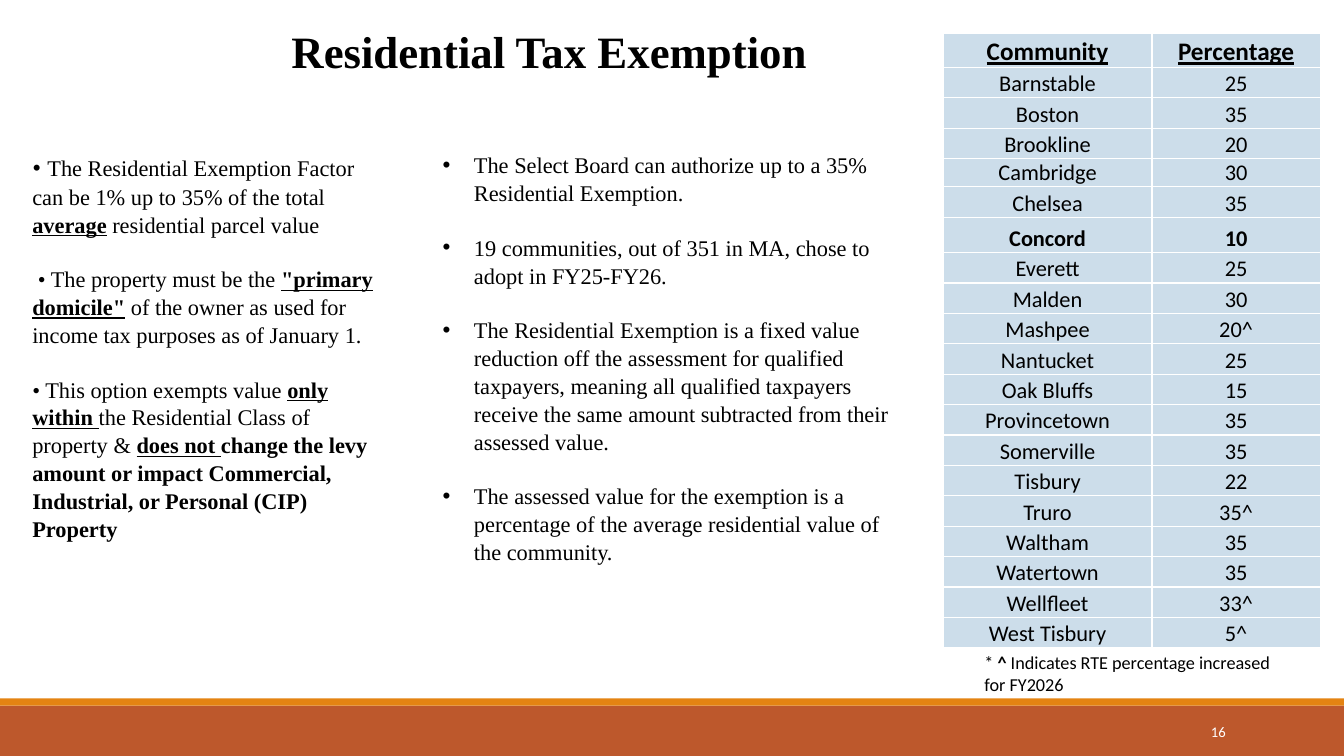
import pptx
import pptx.dml.color
import pptx.enum.shapes
import pptx.enum.text
import pptx.oxml
import pptx.oxml.ns
import pptx.util
from pptx.util import Cm

RGBColor = pptx.dml.color.RGBColor
ANCHOR = pptx.enum.text.MSO_ANCHOR
ALIGN = pptx.enum.text.PP_ALIGN

BLACK = RGBColor(0x00, 0x00, 0x00)
WHITE = RGBColor(0xFF, 0xFF, 0xFF)
RUST = RGBColor(0xBD, 0x58, 0x2C)
ORANGE = RGBColor(0xE4, 0x83, 0x12)
PALE_BLUE = RGBColor(0xCC, 0xDD, 0xEA)

SERIF = "Times New Roman"
SANS = "Calibri"
KEY = {"bold": True, "underline": True}
SLIDE_WIDTH = Cm(33.87)

# Each paragraph is a list of (text, format) runs
RULES = [
    [("• ", {"size": 18}),
     ("The Residential Exemption Factor can be 1% up to 35% of the total ", {}),
     ("average", KEY), (" residential parcel value", {})],
    [(" • The property must be the ", {}), ('"primary domicile"', KEY),
     (" of the owner as used for income tax purposes as of January 1.", {})],
    [("• This option exempts value ", {}), ("only within ", KEY),
     ("the Residential Class of property & ", {}), ("does not ", KEY),
     ("change the levy amount or impact Commercial, Industrial, or Personal "
      "(CIP) Property", {"bold": True})],
]
POINTS = [
    "The Select Board can authorize up to a 35% Residential Exemption.",
    "19 communities, out of 351 in MA, chose to adopt in FY25-FY26.",
    "The Residential Exemption is a fixed value reduction off the assessment for "
    "qualified taxpayers, meaning all qualified taxpayers receive the same amount "
    "subtracted from their assessed value.",
    "The assessed value for the exemption is a percentage of the average "
    "residential value of the community.",
]
COMMUNITIES = [
    ("Community", "Percentage"), ("Barnstable", "25"), ("Boston", "35"),
    ("Brookline", "20"), ("Cambridge", "30"), ("Chelsea", "35"),
    ("Concord", "10"), ("Everett", "25"), ("Malden", "30"), ("Mashpee", "20^"),
    ("Nantucket", "25"), ("Oak Bluffs", "15"), ("Provincetown", "35"),
    ("Somerville", "35"), ("Tisbury", "22"), ("Truro", "35^"),
    ("Waltham", "35"), ("Watertown", "35"), ("Wellfleet", "33^"),
    ("West Tisbury", "5^"),
]
TABLE_HEIGHT = Cm(15.44)
SPECIAL_HEIGHTS = {"Community": Cm(0.86), "Cambridge": Cm(0.66), "Concord": Cm(0.89)}


def add_text(paragraph, text, size=16, font=SERIF, color=BLACK, bold=False,
             underline=False):
    run = paragraph.add_run()
    run.text = text
    run.font.size = pptx.util.Pt(size)
    run.font.name = font
    run.font.color.rgb = color
    run.font.bold = bold
    run.font.underline = underline


def place(shape, left, top, width, height, anchor=ANCHOR.TOP):
    """Position a text shape and return its wrapped text frame."""
    shape.left, shape.top, shape.width, shape.height = left, top, width, height
    frame = shape.text_frame
    frame.word_wrap = True
    frame.auto_size = pptx.enum.text.MSO_AUTO_SIZE.NONE
    frame.vertical_anchor = anchor
    return frame


def add_box(slide, left, top, width, height, anchor=ANCHOR.TOP):
    shape = slide.shapes.add_textbox(left, top, width, height)
    return place(shape, left, top, width, height, anchor).paragraphs[0]


def add_bar(slide, top, height, color):
    bar = slide.shapes.add_shape(pptx.enum.shapes.MSO_SHAPE.RECTANGLE,
                                 0, top, SLIDE_WIDTH, height)
    bar.shadow.inherit = False
    bar.fill.solid()
    bar.fill.fore_color.rgb = color
    bar.line.fill.background()


def fill_list(frame, items, bullet=False):
    indent = Cm(0.79) if bullet else 0
    for index, runs in enumerate(items):
        paragraph = frame.add_paragraph() if index else frame.paragraphs[0]
        paragraph.line_spacing = 1.04
        paragraph.space_before = pptx.util.Pt(19 if index else 0)
        properties = paragraph._p.get_or_add_pPr()
        properties.set("marL", str(indent))
        properties.set("indent", str(-indent))
        if bullet:
            mark = pptx.oxml.ns.qn("a:buChar")
            properties.makeelement(mark)
            properties.append(properties.makeelement(mark, {"char": "•"}))
        else:
            properties.append(properties.makeelement(pptx.oxml.ns.qn("a:buNone")))
        for text, style in runs:
            add_text(paragraph, text, **style)


def format_cell(cell, text, **style):
    cell.margin_left = cell.margin_right = cell.margin_top = Cm(0.02)
    cell.margin_bottom = 0
    cell.vertical_anchor = ANCHOR.BOTTOM
    paragraph = cell.text_frame.paragraphs[0]
    paragraph.alignment = ALIGN.CENTER
    add_text(paragraph, text, font=SANS, **style)
    # Borders come before the fill in the cell properties
    properties = cell._tc.get_or_add_tcPr()
    for side in ("lnL", "lnR", "lnT", "lnB"):
        properties.append(pptx.oxml.parse_xml(
            f'<a:{side} {pptx.oxml.ns.nsdecls("a")} w="12700"><a:solidFill>'
            f'<a:srgbClr val="{WHITE}"/></a:solidFill></a:{side}>'))
    cell.fill.solid()
    cell.fill.fore_color.rgb = PALE_BLUE


def add_community_table(slide):
    table = slide.shapes.add_table(len(COMMUNITIES), 2, Cm(23.77), Cm(0.84),
                                   Cm(9.5), TABLE_HEIGHT).table
    table.columns[0].width, table.columns[1].width = Cm(5.26), Cm(4.24)
    regular_height = ((TABLE_HEIGHT - sum(SPECIAL_HEIGHTS.values()))
                      // (len(COMMUNITIES) - len(SPECIAL_HEIGHTS)))
    styles = {"Community": {"size": 18, **KEY}, "Concord": {"bold": True}}
    for row, values in enumerate(COMMUNITIES):
        name = values[0]
        table.rows[row].height = SPECIAL_HEIGHTS.get(name, regular_height)
        for column, value in enumerate(values):
            format_cell(table.cell(row, column), value, **styles.get(name, {}))


def main():
    presentation = pptx.Presentation()
    presentation.slide_width, presentation.slide_height = SLIDE_WIDTH, Cm(19.05)
    slide = presentation.slides.add_slide(presentation.slide_layouts[3])
    title, rules, points = slide.placeholders

    # Footer bars and slide number
    add_bar(slide, Cm(17.78), Cm(1.27), RUST)
    add_bar(slide, Cm(17.6), Cm(0.18), ORANGE)
    number = add_box(slide, Cm(27.51), Cm(17.93), Cm(3.63), Cm(1.02), ANCHOR.MIDDLE)
    number.alignment = ALIGN.RIGHT
    add_text(number, "16", size=10.5, font=SANS, color=WHITE)

    # Title
    heading = place(title, Cm(7.09), Cm(0.46), Cm(13.79), Cm(1.63)).paragraphs[0]
    heading.alignment = ALIGN.LEFT
    add_text(heading, "Residential Tax Exemption", size=32, bold=True)

    # Two lists
    fill_list(place(rules, Cm(0.56), Cm(3.66), Cm(9.53), Cm(9.91)), RULES)
    fill_list(place(points, Cm(10.9), Cm(3.66), Cm(12.07), Cm(11.96)),
              [[(text, {})] for text in POINTS], bullet=True)

    # Table and its footnote
    add_community_table(slide)
    footnote = add_box(slide, Cm(24.56), Cm(16.28), Cm(7.95), Cm(1.37))
    for text, bold in (("* ", False), ("^", True),
                       (" Indicates RTE percentage increased for FY2026", False)):
        add_text(footnote, text, size=13, font=SANS, bold=bold)

    presentation.save("out.pptx")


if __name__ == "__main__":
    main()
